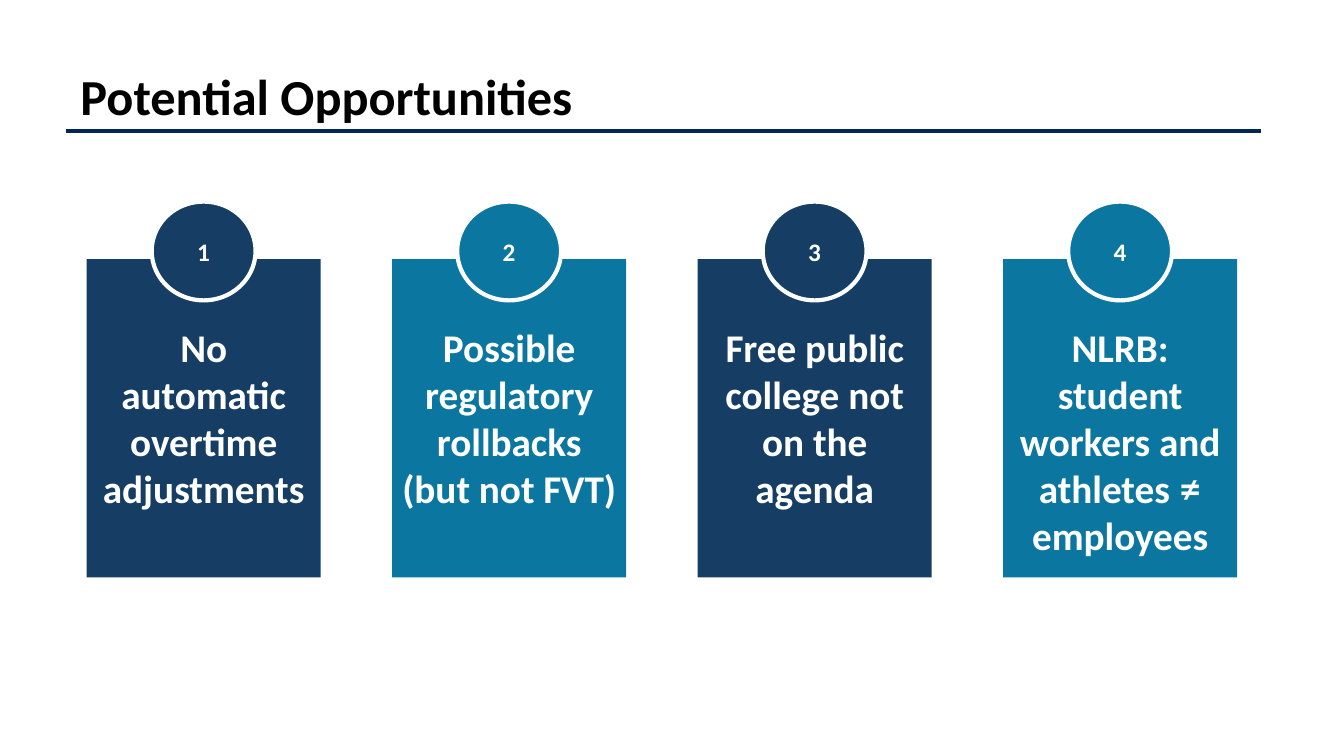
from dataclasses import dataclass

from lxml import etree
from pptx import Presentation
from pptx.dml.color import RGBColor
from pptx.enum.shapes import MSO_CONNECTOR, MSO_SHAPE
from pptx.enum.text import MSO_ANCHOR, PP_ALIGN
from pptx.oxml.ns import qn
from pptx.util import Inches, Pt

RECT, OVAL = MSO_SHAPE.RECTANGLE, MSO_SHAPE.OVAL
STRAIGHT = MSO_CONNECTOR.STRAIGHT
LEFT, CENTER = PP_ALIGN.LEFT, PP_ALIGN.CENTER
TOP, MIDDLE = MSO_ANCHOR.TOP, MSO_ANCHOR.MIDDLE


@dataclass(frozen=True)
class Theme:
    font: str = "Calibri"
    symbol_font: str = "Lato"
    black: str = "000000"
    white: str = "FFFFFF"
    rule: str = "002654"
    navy: str = "163E64"
    teal: str = "0B76A0"
    title_size: int = 36
    body_size: int = 28
    number_size: int = 18
    line_width: int = 3


THEME = Theme()

# Grid in inches: four equal columns, rows shared by all cards
FIRST_COLUMN, COLUMN_PITCH = 0.86, 3.03
CARD_W, CARD_H, CARD_TOP = 2.32, 3.16, 2.57
BADGE_W, BADGE_H, BADGE_TOP = 1.03, 0.98, 2
TEXT_TOP, TEXT_H = 3.16, 2.46

# Each card is a list of (text, font) runs
CARDS = [
    [("No automatic overtime adjustments", THEME.font)],
    [("Possible regulatory rollbacks (but not FVT)", THEME.font)],
    [("Free public college not on the agenda", THEME.font)],
    [("NLRB: student workers and athletes ", THEME.font),
     ("≠", THEME.symbol_font),
     (" employees", THEME.font)],
]


def color(value):
    return RGBColor.from_string(value)


def box(*lengths):
    return [Inches(length) for length in lengths]


def write(s, runs, size, ink, align=CENTER, anchor=TOP):
    tf = s.text_frame
    tf.word_wrap = True
    tf.vertical_anchor = anchor
    p = tf.paragraphs[0]
    p.alignment = align
    p.font.name = THEME.font
    p.font.size = Pt(size)
    p.font.bold = True
    p.font.color.rgb = color(ink)
    for text, font in runs:
        r = p.add_run()
        r.text = text
        if font != THEME.font:
            r.font.name = font


def add_text(shapes, area, runs, size, ink, **layout):
    s = shapes.add_textbox(*box(*area))
    write(s, runs, size, ink, **layout)


def add_filled(shapes, kind, area, fill, outline=None):
    s = shapes.add_shape(kind, *box(*area))
    s.shadow.inherit = False
    s.fill.solid()
    s.fill.fore_color.rgb = color(fill)
    if outline:
        s.line.color.rgb = color(outline)
        s.line.width = Pt(THEME.line_width)
    else:
        s.line.fill.background()
    return s


def add_rule(shapes, left, right, y):
    s = shapes.add_connector(STRAIGHT, *box(left, y, right, y))
    s.line.color.rgb = color(THEME.rule)
    s.line.width = Pt(THEME.line_width)
    etree.SubElement(s._element.spPr, qn("a:effectLst"))


def add_card(shapes, index, runs):
    left = FIRST_COLUMN + index * COLUMN_PITCH
    fill = (THEME.navy, THEME.teal)[index % 2]
    # Panel and its numbered badge
    group = shapes.add_group_shape().shapes
    add_filled(group, RECT, (left, CARD_TOP, CARD_W, CARD_H), fill)
    badge_left = left + (CARD_W - BADGE_W) / 2
    badge = add_filled(group, OVAL, (badge_left, BADGE_TOP, BADGE_W, BADGE_H),
                       fill, THEME.white)
    write(badge, [(str(index + 1), THEME.font)], THEME.number_size,
          THEME.white, anchor=MIDDLE)
    # Message
    add_text(shapes, (left, TEXT_TOP, CARD_W, TEXT_H), runs,
             THEME.body_size, THEME.white)


def main():
    prs = Presentation()
    prs.slide_width, prs.slide_height = box(13.33, 7.5)
    shapes = prs.slides.add_slide(prs.slide_layouts[6]).shapes

    # Title and rule
    add_text(shapes, (0.7, 0.6, 12.17, 0.7),
             [("Potential Opportunities", THEME.font)],
             THEME.title_size, THEME.black, align=LEFT, anchor=MIDDLE)
    add_rule(shapes, 0.65, 12.51, 1.3)

    # Numbered cards
    for index, runs in enumerate(CARDS):
        add_card(shapes, index, runs)

    prs.save("out.pptx")


if __name__ == "__main__":
    main()
